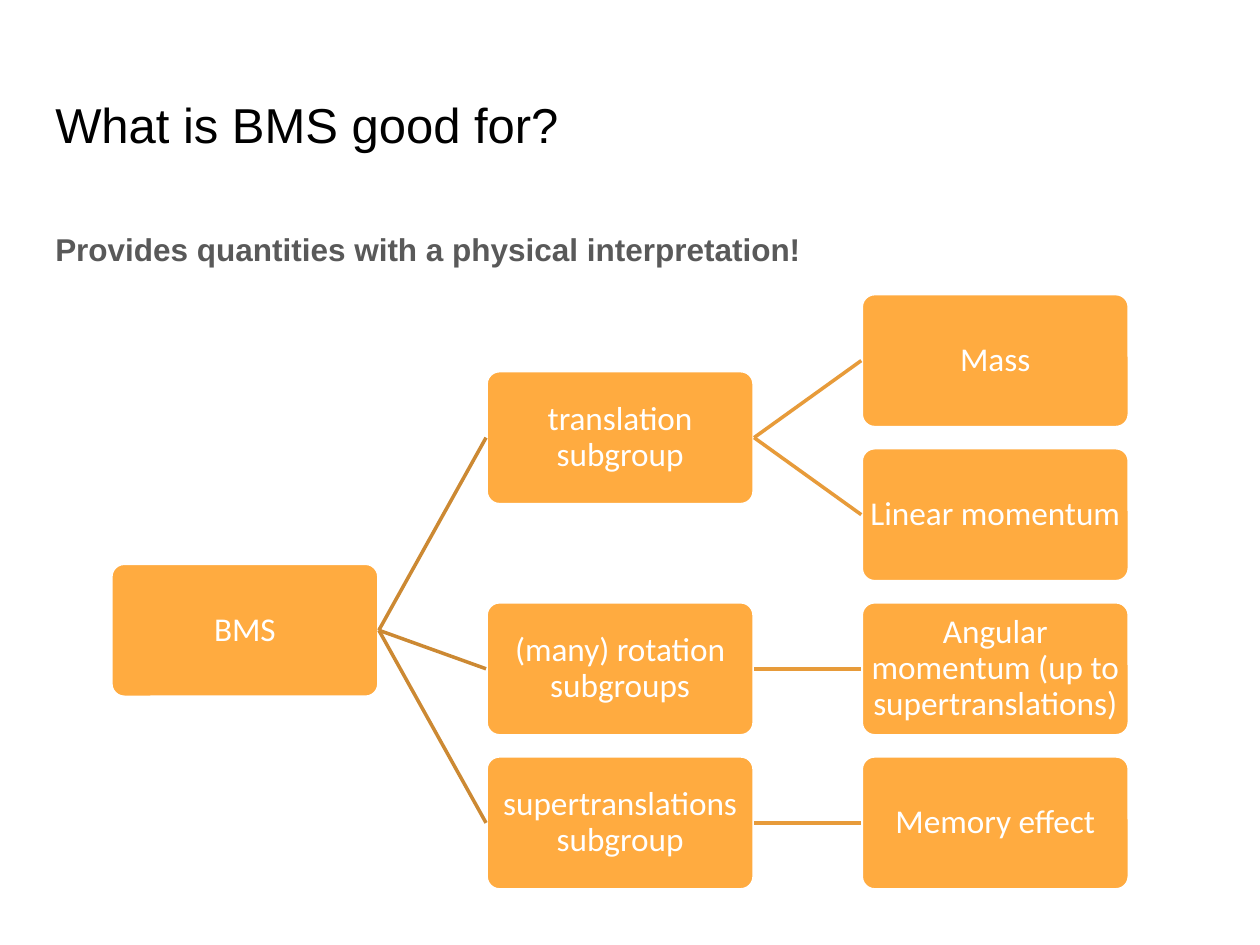
import dataclasses
import typing

import pptx
import pptx.dml.color
import pptx.enum.shapes
import pptx.enum.text
import pptx.oxml.ns
import pptx.util

COLORS = {
    "title": "000000",
    "statement": "595959",
    "box": "FFAB40",
    "white": "FFFFFF",
    "first_branch": "CC8933",
    "second_branch": "E79B3A",
}

SLIDE_WIDTH = pptx.util.Inches(10)
SLIDE_HEIGHT = pptx.util.Inches(7.5)
GRID_LEFT = 0.088 * SLIDE_WIDTH
GRID_TOP = 0.3107 * SLIDE_HEIGHT
BOX_WIDTH = 0.2127 * SLIDE_WIDTH
BOX_HEIGHT = BOX_WIDTH / 2
COLUMN_STEP = BOX_WIDTH * 1.4
ROW_STEP = BOX_HEIGHT * 1.15
RIGHT_SIDE, LEFT_SIDE = 3, 1


@dataclasses.dataclass(frozen=True)
class Heading:
    text: str
    top: float
    height: float
    format: dict[str, typing.Any]
    color: str
    line_spacing: float


@dataclasses.dataclass(frozen=True)
class Node:
    text: str
    column: int
    row: float
    parent: str | None = None


HEADINGS = [
    Heading("What is BMS good for?", 0.0867, 0.1107,
            {"name": "Arial", "size": pptx.util.Pt(28)}, "title", 1.0),
    Heading("Provides quantities with a physical interpretation!", 0.224, 0.664,
            {"name": "Arial", "size": pptx.util.Pt(18), "bold": True}, "statement", 1.15),
]

NODES = [
    Node("BMS", 0, 1.75),
    Node("translation subgroup", 1, 0.5, "BMS"),
    Node("Mass", 2, 0, "translation subgroup"),
    Node("Linear momentum", 2, 1, "translation subgroup"),
    Node("(many) rotation subgroups", 1, 2, "BMS"),
    Node("Angular momentum (up to supertranslations)", 2, 2, "(many) rotation subgroups"),
    Node("supertranslations subgroup", 1, 3, "BMS"),
    Node("Memory effect", 2, 3, "supertranslations subgroup"),
]

BOX_FONT = {"name": "Calibri", "size": pptx.util.Pt(19)}


def rgb(name: str) -> pptx.dml.color.RGBColor:
    return pptx.dml.color.RGBColor.from_string(COLORS[name])


def set_attributes(target: typing.Any, values: dict[str, typing.Any]) -> None:
    for name, value in values.items():
        setattr(target, name, value)


def write_text(shape: typing.Any, text: str, font: dict[str, typing.Any], color: str,
               margin: float, paragraph_format: dict[str, typing.Any],
               anchor: pptx.enum.text.MSO_ANCHOR) -> None:
    frame = shape.text_frame
    sides = ("left", "right", "top", "bottom")
    margins = {f"margin_{side}": pptx.util.Inches(margin) for side in sides}
    set_attributes(frame, {"word_wrap": True, "vertical_anchor": anchor, **margins})
    paragraph = frame.paragraphs[0]
    set_attributes(paragraph, paragraph_format)
    run = paragraph.add_run()
    run.text = text
    set_attributes(run.font, font)
    run.font.color.rgb = rgb(color)


def draw_heading(slide: typing.Any, heading: Heading) -> None:
    shape = slide.shapes.add_textbox(
        int(0.034 * SLIDE_WIDTH), int(heading.top * SLIDE_HEIGHT),
        int(0.932 * SLIDE_WIDTH), int(heading.height * SLIDE_HEIGHT))
    write_text(shape, heading.text, heading.format, heading.color, 0.1,
               {"line_spacing": heading.line_spacing}, pptx.enum.text.MSO_ANCHOR.TOP)


def draw_node(slide: typing.Any, node: Node) -> typing.Any:
    shape = slide.shapes.add_shape(
        pptx.enum.shapes.MSO_SHAPE.ROUNDED_RECTANGLE,
        int(GRID_LEFT + node.column * COLUMN_STEP), int(GRID_TOP + node.row * ROW_STEP),
        int(BOX_WIDTH), int(BOX_HEIGHT))
    shape.adjustments[0] = 0.1
    shape.shadow.inherit = False
    shape.fill.solid()
    shape.fill.fore_color.rgb = rgb("box")
    shape.line.color.rgb = rgb("white")
    shape.line.width = pptx.util.Pt(2)
    write_text(shape, node.text, BOX_FONT, "white", 0.01,
               {"alignment": pptx.enum.text.PP_ALIGN.CENTER, "line_spacing": 0.9},
               pptx.enum.text.MSO_ANCHOR.MIDDLE)
    return shape


def draw_branch(slide: typing.Any, parent: typing.Any, child: typing.Any, color: str) -> None:
    connector = slide.shapes.add_connector(
        pptx.enum.shapes.MSO_CONNECTOR.STRAIGHT, 0, 0, 0, 0)
    connector.begin_connect(parent, RIGHT_SIDE)
    connector.end_connect(child, LEFT_SIDE)
    connector.line.color.rgb = rgb(color)
    connector.line.width = pptx.util.Pt(2)
    properties = connector.element.spPr
    properties.append(properties.makeelement(pptx.oxml.ns.qn("a:effectLst"), {}))


def main() -> None:
    presentation = pptx.Presentation()
    set_attributes(presentation, {"slide_width": SLIDE_WIDTH, "slide_height": SLIDE_HEIGHT})
    slide = presentation.slides.add_slide(presentation.slide_layouts[6])
    for heading in HEADINGS:
        draw_heading(slide, heading)
    boxes = {node.text: draw_node(slide, node) for node in NODES}
    for node in NODES:
        if node.parent:
            color = "first_branch" if node.column == 1 else "second_branch"
            draw_branch(slide, boxes[node.parent], boxes[node.text], color)
    presentation.save("out.pptx")


if __name__ == "__main__":
    main()
